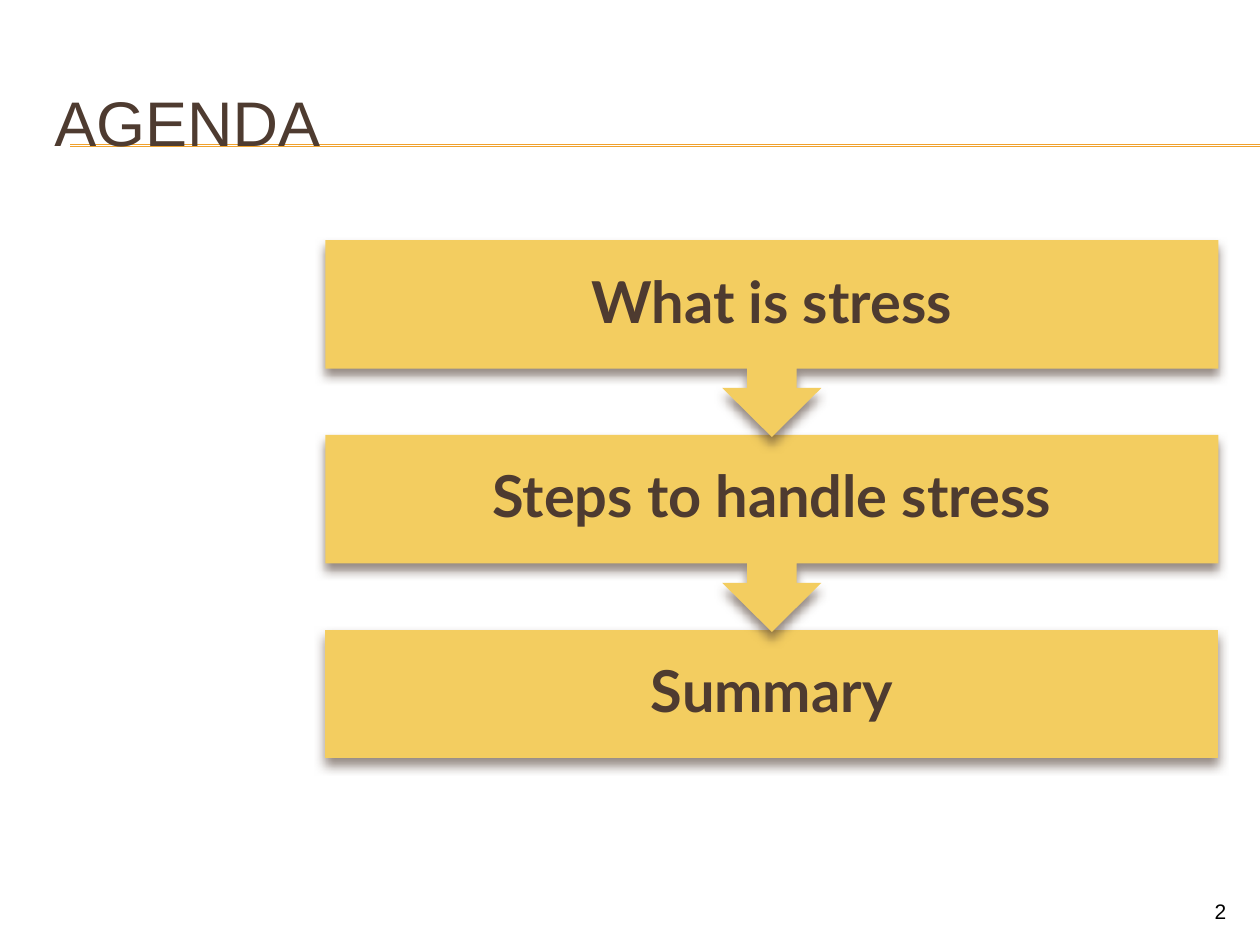
from lxml import etree
from pptx import Presentation
from pptx.dml.color import RGBColor
from pptx.enum.shapes import MSO_CONNECTOR
from pptx.enum.text import MSO_ANCHOR, PP_ALIGN
from pptx.oxml.ns import qn
from pptx.util import Cm, Pt

STRAIGHT = MSO_CONNECTOR.STRAIGHT
MIDDLE = MSO_ANCHOR.MIDDLE
LEFT, CENTER, RIGHT = PP_ALIGN.LEFT, PP_ALIGN.CENTER, PP_ALIGN.RIGHT

BROWN, YELLOW, ORANGE, BLACK = "4E3B30", "F3CD60", "F0A22E", "000000"

STEPS = ["What is stress", "Steps to handle stress", "Summary"]
STEP_LEFT, STEP_TOP, STEP_PITCH = 6.56, 4.84, 3.93
STEP_WIDTH, STEP_HEIGHT = 18, 2.59
STEM_HALF, HEAD_HALF = 0.5, 1
HEAD_TOP, ARROW_TIP = 2.98, 3.97  # measured from the top of a step
INSET = 0.66


def rgb(value):
    return RGBColor.from_string(value)


def write(tf, text, font, size, color, align, bold=False):
    tf.text = text
    p = tf.paragraphs[0]
    p.alignment = align
    p.font.name = font
    p.font.size = Pt(size)
    p.font.bold = bold
    p.font.color.rgb = rgb(color)
    return p


def set_title(s, text):
    title = s.shapes.title
    title.left, title.top = Cm(0.84), Cm(1.27)
    title.width, title.height = Cm(24.13), Cm(2.34)
    title.text_frame.vertical_anchor = MIDDLE
    write(title.text_frame, text, "Arial", 36, BROWN, LEFT)


def add_rule(s, y):
    """Draw a line to the right slide edge, behind the title."""
    line = s.shapes.add_connector(STRAIGHT, Cm(1.42), Cm(y), Cm(25.4), Cm(y))
    line.line.color.rgb = rgb(ORANGE)
    line.line.width = Pt(0.75)
    etree.SubElement(line._element.spPr, qn("a:effectLst"))
    s.shapes._spTree.insert(2, line._element)


def add_shadow(sp):
    sp.shadow.inherit = False
    effects = sp._element.spPr.find(qn("a:effectLst"))
    shadow = etree.SubElement(effects, qn("a:outerShdw"), blurRad=str(Pt(6)),
                              dist=str(Pt(4)), dir="5400000", rotWithShape="0")
    color = etree.SubElement(shadow, qn("a:srgbClr"), val=BROWN)
    etree.SubElement(color, qn("a:alpha"), val="60000")


def step_outline(top, has_arrow):
    right, bottom = STEP_LEFT + STEP_WIDTH, top + STEP_HEIGHT
    middle = STEP_LEFT + STEP_WIDTH / 2
    arrow = [
        (middle + STEM_HALF, bottom),
        (middle + STEM_HALF, top + HEAD_TOP),
        (middle + HEAD_HALF, top + HEAD_TOP),
        (middle, top + ARROW_TIP),
        (middle - HEAD_HALF, top + HEAD_TOP),
        (middle - STEM_HALF, top + HEAD_TOP),
        (middle - STEM_HALF, bottom),
    ]
    return [(STEP_LEFT, top), (right, top), (right, bottom),
            *(arrow if has_arrow else []), (STEP_LEFT, bottom)]


def add_step(s, text, top, has_arrow):
    points = [(Cm(x), Cm(y)) for x, y in step_outline(top, has_arrow)]
    builder = s.shapes.build_freeform(*points[0])
    builder.add_line_segments(points[1:], close=True)
    sp = builder.convert_to_shape()
    sp.fill.solid()
    sp.fill.fore_color.rgb = rgb(YELLOW)
    sp.line.fill.background()
    add_shadow(sp)

    tf = sp.text_frame
    tf.word_wrap = True
    tf.vertical_anchor = MIDDLE
    tf.margin_left = tf.margin_top = tf.margin_right = Cm(INSET)
    tf.margin_bottom = Cm(INSET + (ARROW_TIP - STEP_HEIGHT if has_arrow else 0))
    p = write(tf, text, "Lato", 33, BROWN, CENTER, bold=True)
    p.line_spacing = 0.9


def add_page_number(s, number):
    tf = s.shapes.add_textbox(Cm(22.86), Cm(17.98), Cm(2.11), Cm(0.69)).text_frame
    tf.word_wrap = True
    write(tf, number, "Arial", 12, BLACK, RIGHT)


def main():
    prs = Presentation()
    prs.slide_width, prs.slide_height = Cm(25.4), Cm(19.05)
    s = prs.slides.add_slide(prs.slide_layouts[5])
    set_title(s, "AGENDA")
    for y in (2.92, 2.95):
        add_rule(s, y)
    add_page_number(s, "2")
    # Last step first, so that each arrow lies over the step below it
    last = len(STEPS) - 1
    for i, text in reversed(list(enumerate(STEPS))):
        add_step(s, text, STEP_TOP + i * STEP_PITCH, has_arrow=i < last)
    prs.save("out.pptx")


if __name__ == "__main__":
    main()
